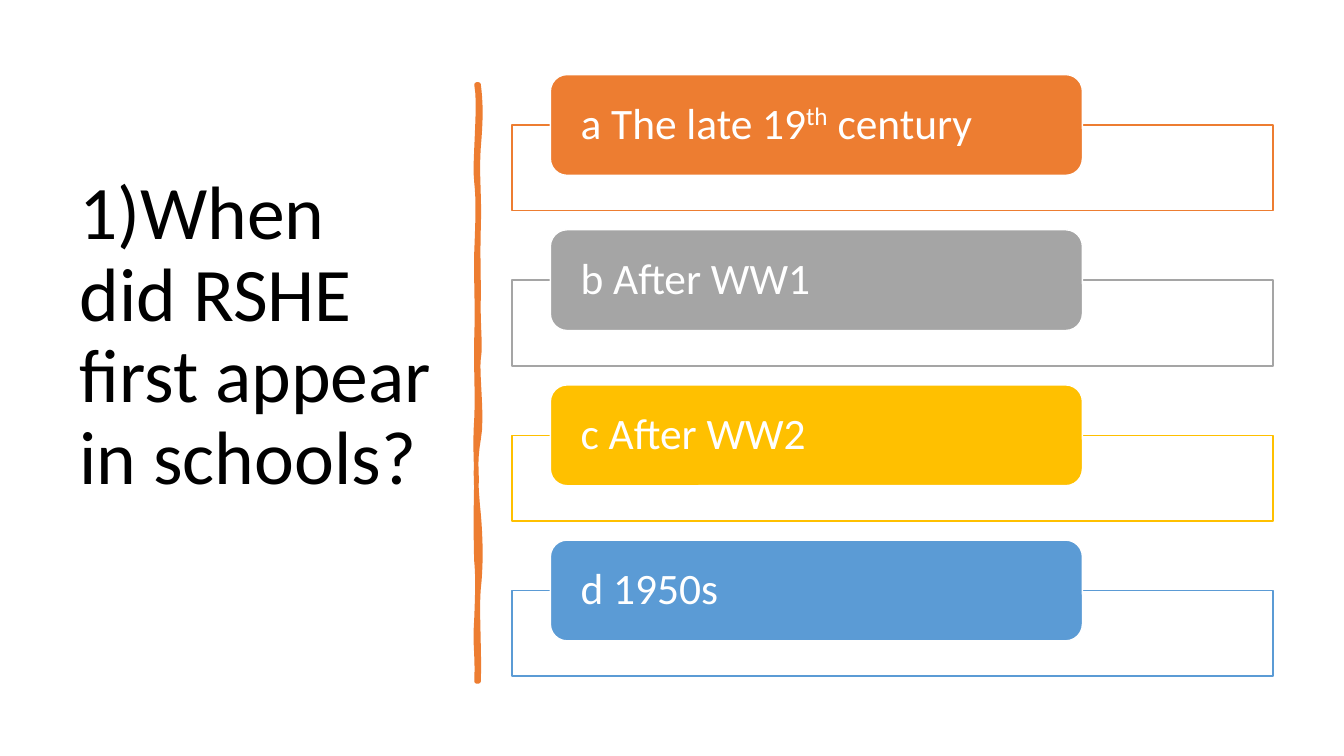
from dataclasses import dataclass

from pptx import Presentation
from pptx import util as u
from pptx.dml.color import RGBColor
from pptx.enum import shapes, text
from pptx.oxml.ns import qn
from lxml import etree

FONT = "Calibri"
HUES = {"ink": "000000", "white": "FFFFFF", "orange": "ED7D31",
        "grey": "A5A5A5", "gold": "FFC000", "blue": "5B9BD5"}


@dataclass
class Piece:
    words: str
    rise: int = 0  # superscript, in percent


@dataclass
class Answer:
    hue: str
    pieces: list[Piece]


ANSWERS = [
    Answer("orange", [Piece("a The late 19"), Piece("th", 30), Piece(" century")]),
    Answer("grey", [Piece("b After WW1")]),
    Answer("gold", [Piece("c After WW2")]),
    Answer("blue", [Piece("d 1950s")]),
]
TOP, PITCH = 1.88, 3.91  # first answer and step, in cm

# Brush stroke edges in cm: a knot, then two handles and a knot per curve
RIGHT = [(12.06, 2.13), (12.12, 2.59), (12.12, 3.02), (12.06, 3.71),
         (12.01, 4.39), (12.09, 4.95), (12.06, 5.74),
         (12.04, 6.53), (12.06, 6.65), (12.06, 7.47),
         (12.04, 8.26), (12.12, 8.69), (12.06, 9.04),
         (12.01, 9.4), (12.17, 10.52), (12.06, 11.07),
         (11.96, 11.61), (11.99, 12.29), (12.06, 12.95),
         (12.12, 13.61), (12.12, 14.33), (12.06, 14.83),
         (12.01, 15.32), (12.09, 16.51), (12.06, 17.17)]
LEFT = [(12.01, 17.17), (12.04, 16.41), (11.96, 16.36), (12.01, 15.57),
        (12.04, 14.81), (12.04, 14.48), (12.01, 14.15),
        (11.99, 13.82), (11.99, 12.57), (12.01, 12.12),
        (12.01, 11.66), (11.96, 11.3), (12.01, 10.54),
        (12.04, 9.8), (11.99, 9.47), (12.01, 8.51),
        (12.04, 7.57), (11.99, 7.14), (12.01, 6.35),
        (12.04, 5.54), (12.06, 5.08), (12.01, 4.6),
        (11.94, 4.14), (12.12, 2.64), (12.01, 2.13)]


def tint(hue: str) -> RGBColor:
    return RGBColor.from_string(HUES[hue])


def paint(shape, fill: str, line: str, width: float) -> None:
    shape.shadow.inherit = False
    shape.fill.solid()
    shape.fill.fore_color.rgb = tint(fill)
    shape.line.color.rgb = tint(line)
    shape.line.width = u.Pt(width)


def write(shape, pieces: list[Piece], size: float, hue: str) -> None:
    frame = shape.text_frame
    frame.word_wrap = True
    frame.vertical_anchor = text.MSO_ANCHOR.MIDDLE
    para = frame.paragraphs[0]
    para.alignment = text.PP_ALIGN.LEFT
    para.line_spacing = 0.9
    for piece in pieces:
        run = para.add_run()
        run.text = piece.words
        run.font.name = FONT
        run.font.size = u.Pt(size)
        run.font.color.rgb = tint(hue)
        if piece.rise:
            run.font._element.set("baseline", str(piece.rise * 1000))


def trace(knots: list[tuple[float, float]], steps: int = 8) -> list[tuple[int, int]]:
    """Points along a chain of cubic curves."""
    dots = [knots[0]]
    for i in range(0, len(knots) - 1, 3):
        a, b, c, d = knots[i:i + 4]
        for n in range(1, steps + 1):
            t = n / steps
            s = 1 - t
            dots.append(tuple(s**3 * p + 3 * s * s * t * q + 3 * s * t * t * r + t**3 * v
                              for p, q, r, v in zip(a, b, c, d)))
    return [(u.Cm(x), u.Cm(y)) for x, y in dots]


def draw(slide, answer: Answer, top: float) -> None:
    # Outlined frame behind
    frame = slide.shapes.add_shape(shapes.MSO_SHAPE.RECTANGLE, u.Cm(12.9),
                                   u.Cm(top + 1.27), u.Cm(19.18), u.Cm(2.16))
    paint(frame, "white", answer.hue, 1)
    color = frame.fill._xPr.find(".//" + qn("a:srgbClr"))
    etree.SubElement(color, qn("a:alpha")).set("val", "90000")
    # Coloured label in front
    label = slide.shapes.add_shape(shapes.MSO_SHAPE.ROUNDED_RECTANGLE, u.Cm(13.87),
                                   u.Cm(top), u.Cm(13.41), u.Cm(2.54))
    paint(label, answer.hue, "white", 1)
    label.text_frame.margin_left = label.text_frame.margin_right = u.Cm(0.64)
    label.text_frame.margin_top = label.text_frame.margin_bottom = 0
    write(label, answer.pieces, 31, "white")


def main() -> None:
    deck = Presentation()
    deck.slide_width, deck.slide_height = u.Cm(33.87), u.Cm(19.05)
    slide = deck.slides.add_slide(deck.slide_layouts[6])

    # Question, raised a little above the middle
    title = slide.shapes.add_textbox(u.Cm(1.75), u.Cm(1.78), u.Cm(9.5), u.Cm(15.52))
    title.text_frame.margin_bottom = u.Cm(2.2)
    write(title, [Piece("1)When did RSHE first appear in schools?")], 54, "ink")

    # Brush stroke
    dots = trace(RIGHT) + trace(LEFT)
    pen = slide.shapes.build_freeform(*dots[0])
    pen.add_line_segments(dots[1:], close=True)
    paint(pen.convert_to_shape(), "orange", "orange", 3.25)

    # Answers
    for row, answer in enumerate(ANSWERS):
        draw(slide, answer, TOP + row * PITCH)

    deck.save("out.pptx")


if __name__ == "__main__":
    main()
